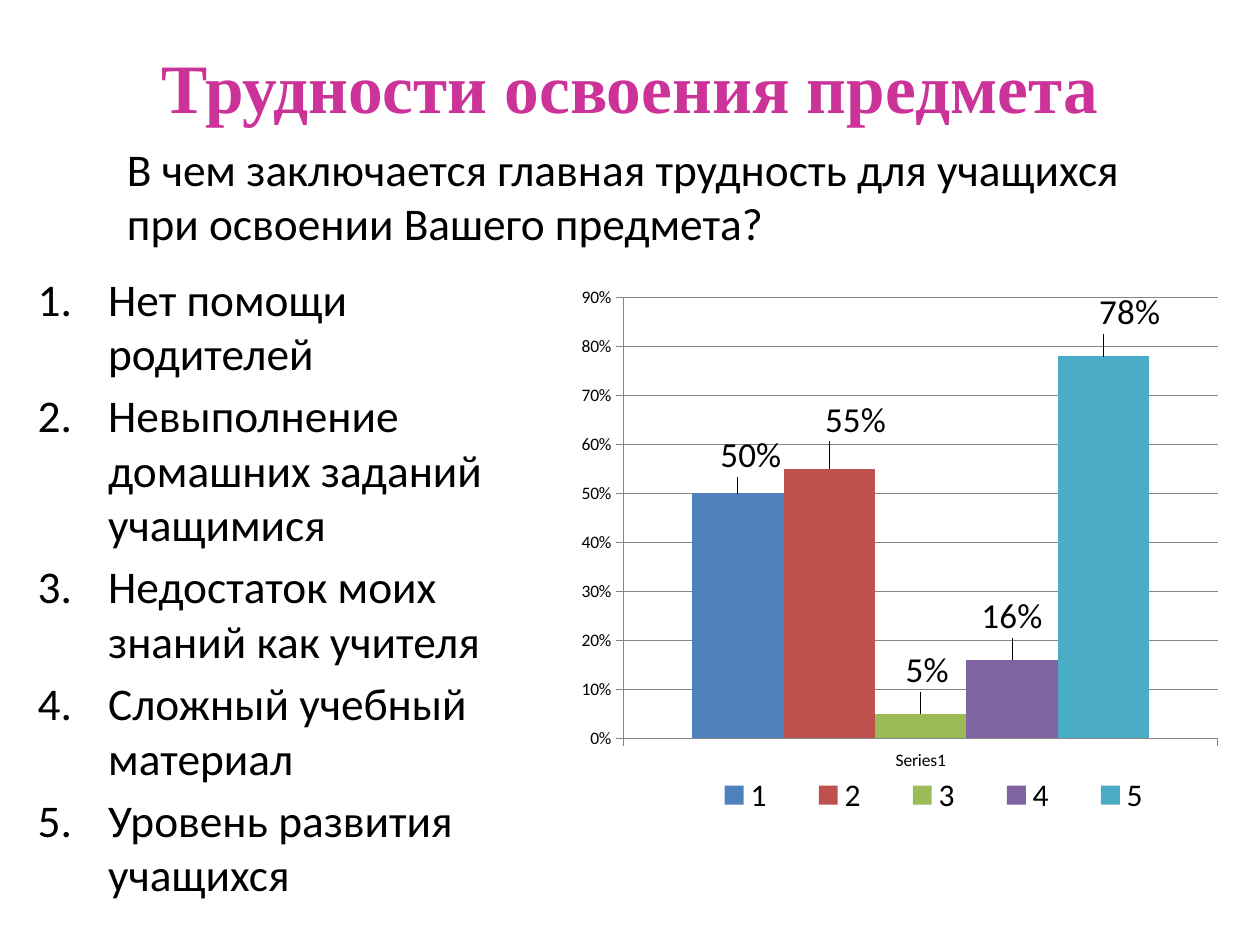
from dataclasses import dataclass

from lxml.etree import SubElement
from pptx import Presentation
from pptx.chart.data import CategoryChartData
from pptx.dml.color import RGBColor
from pptx.enum.chart import XL_CHART_TYPE as ChartType
from pptx.enum.chart import XL_LABEL_POSITION as LabelPosition
from pptx.enum.chart import XL_LEGEND_POSITION as LegendPosition
from pptx.enum.chart import XL_TICK_MARK as TickMark
from pptx.enum.shapes import MSO_SHAPE as Preset
from pptx.enum.text import MSO_ANCHOR as Anchor
from pptx.enum.text import PP_ALIGN as Align
from pptx.oxml import parse_xml
from pptx.oxml.ns import nsdecls, qn
from pptx.util import Pt

PX = 9144


@dataclass(frozen=True)
class Theme:
    heading_font: str = "Times New Roman"
    body_font: str = "Calibri"
    heading: str = "CC3399"
    ink: str = "000000"
    panel: str = "FFFFFF"
    grid: str = "868686"
    bars: tuple = ("4F81BD", "C0504D", "9BBB59", "8064A2", "4BACC6")
    heading_size: float = 39.6
    body_size: float = 25.9
    axis_size: int = 10
    legend_size: int = 18
    label_size: int = 20
    item_gap: float = 4.5
    panel_alpha: int = 65


def set_font(font, color, **values):
    for name, value in values.items():
        setattr(font, name, value)
    font.color.rgb = RGBColor.from_string(color)


def set_layout(parent, index, **fractions):
    for old in parent.findall(qn("c:layout")):
        parent.remove(old)
    layout = parse_xml(f"<c:layout {nsdecls('c')}><c:manualLayout/></c:layout>")
    for tag, value in fractions.items():
        SubElement(layout[0], qn(f"c:{tag}"), val=str(value))
    parent.insert(index, layout)


class SlideBuilder:
    def __init__(self, slide, theme):
        self.slide = slide
        self.theme = theme

    def body_style(self, size):
        return {"name": self.theme.body_font, "size": Pt(size)}

    def title(self, box, wording):
        theme = self.theme
        frame = self.slide.shapes.add_textbox(*(n * PX for n in box)).text_frame
        frame.word_wrap = True
        frame.vertical_anchor = Anchor.MIDDLE
        heading = frame.paragraphs[0]
        heading.text = wording
        heading.alignment = Align.CENTER
        set_font(heading.font, theme.heading, name=theme.heading_font,
                 size=Pt(theme.heading_size), bold=True)

    def panel(self, box, lines, indent=0):
        theme = self.theme
        panel = self.slide.shapes.add_shape(Preset.RECTANGLE, *(n * PX for n in box))
        panel.shadow.inherit = False
        panel.fill.solid()
        panel.fill.fore_color.rgb = RGBColor.from_string(theme.panel)
        tint = panel.fill._xPr.find(f".//{qn('a:srgbClr')}")
        SubElement(tint, qn("a:alpha"), val=str(theme.panel_alpha * 1000))
        panel.line.fill.background()
        frame = panel.text_frame
        frame.word_wrap = True
        frame.vertical_anchor = Anchor.TOP
        for number, line in enumerate(lines):
            item = frame.add_paragraph() if number else frame.paragraphs[0]
            item.text = line
            item.alignment = Align.LEFT
            if number:
                item.space_before = Pt(theme.item_gap)
            if indent:
                props = item._p.get_or_add_pPr()
                props.set("marL", str(indent * PX))
                props.set("indent", str(-indent * PX))
                SubElement(props, qn("a:buFont"), typeface="+mj-lt")
                SubElement(props, qn("a:buAutoNum"), type="arabicPeriod")
            set_font(item.font, theme.ink, **self.body_style(theme.body_size))

    def column_chart(self, box, category, shares, label_shifts):
        theme = self.theme
        data = CategoryChartData(number_format="0%")
        data.categories = [category]
        for number, share in enumerate(shares, 1):
            data.add_series(str(number), [share])
        chart = self.slide.shapes.add_chart(
            ChartType.COLUMN_CLUSTERED, *(n * PX for n in box), data).chart
        set_font(chart.font, theme.ink, **self.body_style(theme.axis_size))
        chart.has_title = False
        self.axes(chart)
        self.legend(chart)
        plot = chart.plots[0]
        for name, value in {"gap_width": 150, "overlap": 0,
                            "vary_by_categories": False}.items():
            setattr(plot, name, value)
        for series, color in zip(plot.series, theme.bars):
            series.format.fill.solid()
            series.format.fill.fore_color.rgb = RGBColor.from_string(color)
            label = series.points[0].data_label
            set_font(label.font, theme.ink, **self.body_style(theme.label_size))
            label.position = LabelPosition.OUTSIDE_END
        for label, (x, y) in zip(chart.element.xpath(".//c:dLbl"), label_shifts):
            set_layout(label, 1, x=x, y=y)
        set_layout(chart.element.xpath(".//c:plotArea")[0], 0, layoutTarget="inner",
                   xMode="edge", yMode="edge", x=0.08, y=0.04, w=0.9, h=0.78)

    def axes(self, chart):
        shares = chart.value_axis
        for name, value in {"minimum_scale": 0, "maximum_scale": 0.9, "major_unit": 0.1,
                            "has_major_gridlines": True}.items():
            setattr(shares, name, value)
        shares.tick_labels.number_format = "0%"
        shares.tick_labels.number_format_is_linked = False
        for axis in (chart.category_axis, shares):
            axis.major_tick_mark = TickMark.OUTSIDE
        for part in (chart.category_axis, shares, shares.major_gridlines):
            part.format.line.color.rgb = RGBColor.from_string(self.theme.grid)
            part.format.line.width = Pt(0.75)

    def legend(self, chart):
        chart.has_legend = True
        legend = chart.legend
        legend.position = LegendPosition.BOTTOM
        legend.include_in_layout = False
        set_font(legend.font, self.theme.ink, **self.body_style(self.theme.legend_size))
        set_layout(chart.element.xpath(".//c:legend")[0], 1, xMode="edge", yMode="edge",
                   x=0.17, y=0.88, w=0.76, h=0.08)


def main():
    deck = Presentation()
    deck.slide_width, deck.slide_height = 1000 * PX, 750 * PX
    builder = SlideBuilder(deck.slides.add_slide(deck.slide_layouts[6]), Theme())
    builder.title((50, 30, 900, 77), "Трудности освоения предмета")
    builder.panel((91, 107, 820, 106), [
        "В чем заключается главная трудность для учащихся при освоении Вашего предмета?"])
    builder.panel((20, 210, 409, 457), [
        "Нет помощи родителей",
        "Невыполнение домашних заданий учащимися",
        "Недостаток моих знаний как учителя",
        "Сложный учебный материал",
        "Уровень развития учащихся",
    ], indent=56)
    builder.column_chart(
        (453, 218, 524, 449), "Series1", (0.5, 0.55, 0.05, 0.16, 0.78),
        ((0.02, -0.02), (0.04, -0.04), (0.01, -0.03), (0, -0.03), (0.04, -0.03)))
    deck.save("out.pptx")


if __name__ == "__main__":
    main()
